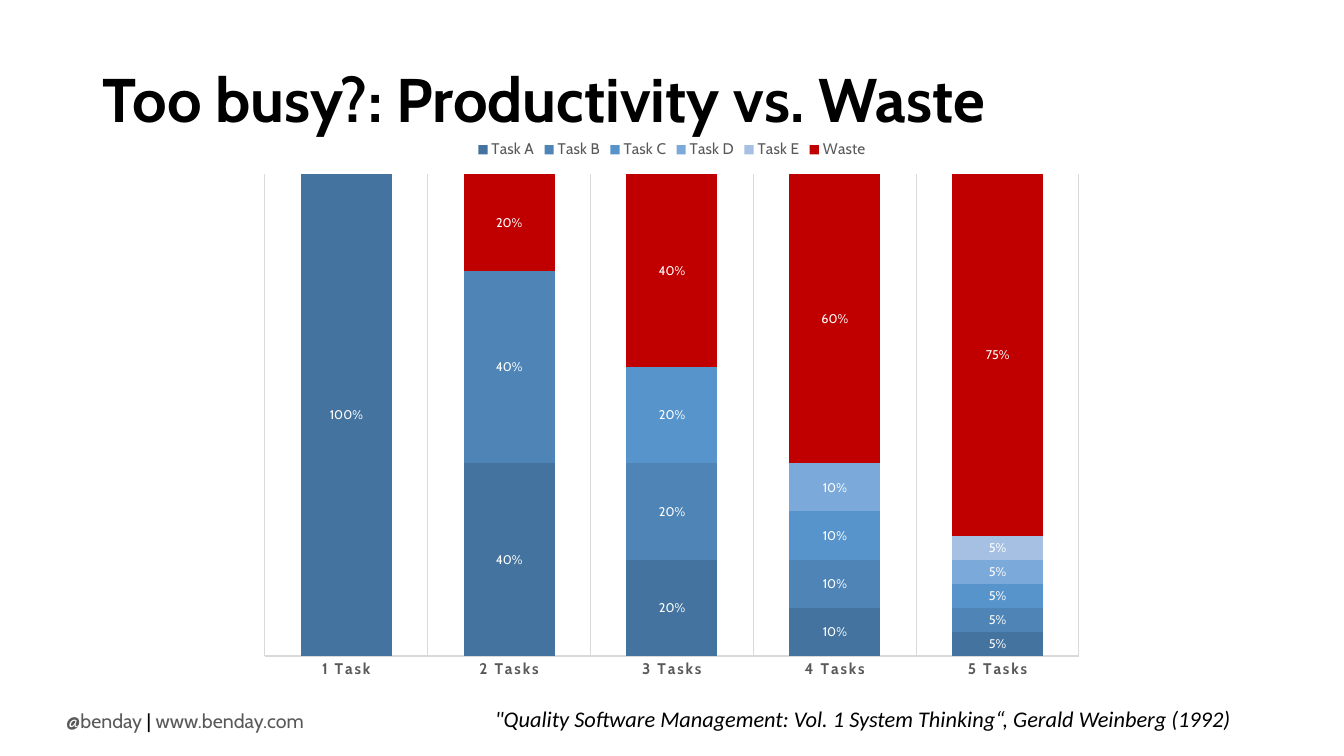
from lxml.etree import SubElement
from pptx import Presentation
from pptx.chart.data import CategoryChartData
from pptx.dml.color import RGBColor
from pptx.enum.chart import XL_CHART_TYPE, XL_LABEL_POSITION, XL_LEGEND_POSITION, XL_TICK_MARK
from pptx.enum.text import MSO_ANCHOR, MSO_AUTO_SIZE, PP_ALIGN
from pptx.oxml.ns import qn
from pptx.util import Cm, Pt

BLACK, GREY, LIGHT_GREY, WHITE = "000000", "595959", "D9D9D9", "FFFFFF"
CATEGORIES = ["1 Task", "2 Tasks", "3 Tasks", "4 Tasks", "5 Tasks"]
SERIES = [
    ("Task A", "43739E", [1, 0.4, 0.2, 0.1, 0.05]),
    ("Task B", "4E85B6", [0, 0.4, 0.2, 0.1, 0.05]),
    ("Task C", "5794CB", [0, 0, 0.2, 0.1, 0.05]),
    ("Task D", "7AA9DA", [0, 0, 0, 0.1, 0.05]),
    ("Task E", "A5C0E3", [0, 0, 0, 0, 0.05]),
    ("Waste", "C00000", [0, 0.2, 0.4, 0.6, 0.75]),
]


def color(hex_value):
    return RGBColor.from_string(hex_value)


def set_attributes(target, values):
    for name, value in values.items():
        setattr(target, name, value)


def format_font(font, size, hex_value, name="Cabin", **extras):
    set_attributes(font, {"size": Pt(size), "name": name, **extras})
    font.color.rgb = color(hex_value)


def format_line(line):
    line.color.rgb = color(LIGHT_GREY)
    line.width = Pt(0.75)


def place(shape, left, top, width, height):
    set_attributes(shape, {"left": Cm(left), "top": Cm(top),
                           "width": Cm(width), "height": Cm(height)})


def add_title(slide, text):
    title = slide.shapes.title
    place(title, 2.34, 1.0, 29.21, 3.18)
    frame = title.text_frame
    set_attributes(frame, {"text": text, "vertical_anchor": MSO_ANCHOR.MIDDLE,
                           "auto_size": MSO_AUTO_SIZE.NONE})
    paragraph = frame.paragraphs[0]
    set_attributes(paragraph, {"alignment": PP_ALIGN.LEFT, "line_spacing": 0.9})
    format_font(paragraph.runs[0].font, 44, BLACK, bold=True)


def add_text(slide, box, runs, size, **font_values):
    shape = slide.shapes.add_textbox(*map(Cm, box))
    frame = shape.text_frame
    set_attributes(frame, {"word_wrap": False, "auto_size": MSO_AUTO_SIZE.SHAPE_TO_FIT_TEXT})
    for text, hex_value in runs:
        run = frame.paragraphs[0].add_run()
        run.text = text
        format_font(run.font, size, hex_value, **font_values)


def format_axes(chart):
    categories = chart.category_axis
    set_attributes(categories, {"major_tick_mark": XL_TICK_MARK.NONE,
                                "minor_tick_mark": XL_TICK_MARK.NONE,
                                "has_major_gridlines": True})
    format_line(categories.format.line)
    format_line(categories.major_gridlines.format.line)
    format_font(categories.tick_labels.font, 11, GREY, bold=True)
    for properties in chart.element.xpath(".//c:catAx/c:txPr//a:defRPr"):
        properties.set("spc", "120")
    set_attributes(chart.value_axis, {"visible": False, "has_major_gridlines": False,
                                      "minimum_scale": 0, "maximum_scale": 1})
    chart.value_axis.tick_labels.number_format = "0%"


def format_series(series, hex_value):
    series.format.fill.solid()
    series.format.fill.fore_color.rgb = color(hex_value)
    labels = series.data_labels
    set_attributes(labels, {"show_value": True, "position": XL_LABEL_POSITION.CENTER,
                            "number_format": "0%", "number_format_is_linked": False})
    format_font(labels.font, 9, WHITE)


def hide_zero_labels(labels, values):
    zeros = [index for index, value in enumerate(values) if value == 0]
    for position, index in enumerate(zeros):
        label = SubElement(labels, qn("c:dLbl"))
        SubElement(label, qn("c:idx")).set("val", str(index))
        SubElement(label, qn("c:delete")).set("val", "1")
        labels.insert(position, label)


def add_productivity_chart(slide):
    data = CategoryChartData(number_format="0%")
    data.categories = CATEGORIES
    for name, _, values in SERIES:
        data.add_series(name, values)
    box = map(Cm, (6.25, 3.25, 21.37, 14.14))
    chart = slide.shapes.add_chart(XL_CHART_TYPE.COLUMN_STACKED_100, *box, data).chart
    set_attributes(chart, {"has_title": False, "has_legend": True})
    format_font(chart.font, 10, BLACK)
    set_attributes(chart.legend, {"position": XL_LEGEND_POSITION.TOP,
                                  "include_in_layout": False})
    format_font(chart.legend.font, 11, GREY)
    plot = chart.plots[0]
    set_attributes(plot, {"gap_width": 79, "overlap": 100, "vary_by_categories": False})
    format_axes(chart)
    for series, (_, hex_value, _) in zip(plot.series, SERIES):
        format_series(series, hex_value)
    for labels, (_, _, values) in zip(chart.element.xpath(".//c:ser/c:dLbls"), SERIES):
        hide_zero_labels(labels, values)


def main():
    presentation = Presentation()
    set_attributes(presentation, {"slide_width": Cm(33.87), "slide_height": Cm(19.05)})
    slide = presentation.slides.add_slide(presentation.slide_layouts[5])
    add_text(slide, (1.42, 17.73, 6.83, 0.86),
             [("@benday", GREY), (" | ", BLACK), ("www.benday.com", GREY)], 14)
    add_title(slide, "Too busy?: Productivity vs. Waste")
    add_text(slide, (12.22, 17.65, 19.3, 0.94),
             [('"Quality Software Management: Vol. 1 System Thinking“, Gerald Weinberg (1992)', BLACK)],
             16, name="Calibri", italic=True)
    add_productivity_chart(slide)
    presentation.save("out.pptx")


if __name__ == "__main__":
    main()
